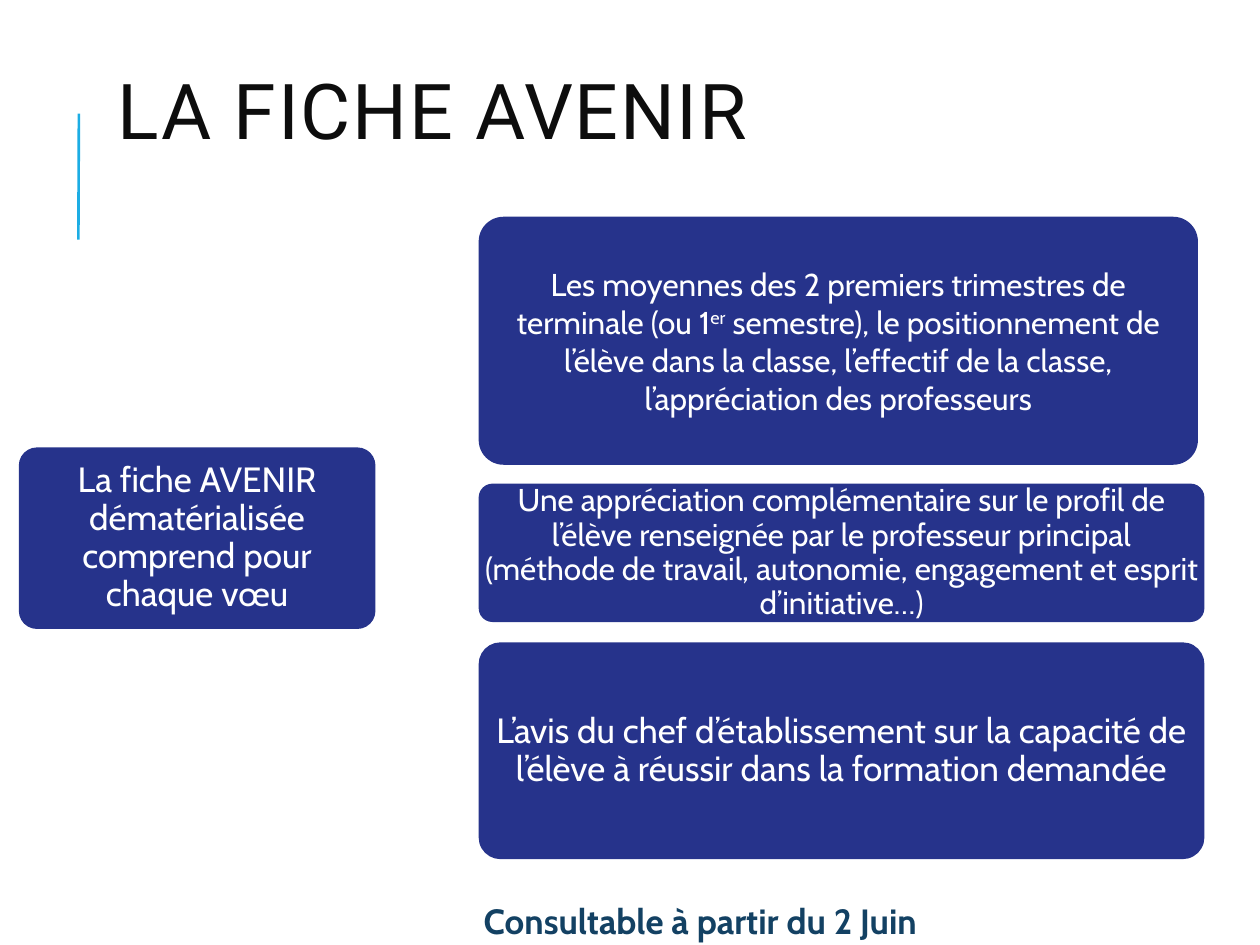
from dataclasses import dataclass

from lxml import etree
from pptx import Presentation
from pptx.dml.color import RGBColor
from pptx.enum.shapes import MSO_CONNECTOR, MSO_SHAPE
from pptx.enum.text import MSO_ANCHOR, PP_ALIGN
from pptx.oxml.ns import qn
from pptx.util import Cm, Pt

ROUNDED = MSO_SHAPE.ROUNDED_RECTANGLE
STRAIGHT = MSO_CONNECTOR.STRAIGHT
MIDDLE, TOP = MSO_ANCHOR.MIDDLE, MSO_ANCHOR.TOP
LEFT, CENTER = PP_ALIGN.LEFT, PP_ALIGN.CENTER

COLORS = {
    "box": "26338B",
    "white": "FFFFFF",
    "title": "0D0D0D",
    "accent": "1CADE4",
    "caption": "134163",
}
DETAIL_LEFT = 9.65


@dataclass
class Box:
    left: float
    top: float
    width: float
    height: float
    texts: tuple[str, ...]
    size: int
    line_spacing: float = 0.9


BOXES = [
    Box(0.38, 9.02, 7.19, 3.66,
        ("La fiche AVENIR dématérialisée comprend pour chaque vœu",), 20),
    Box(DETAIL_LEFT, 4.37, 14.5, 5,
        ("Les moyennes des 2 premiers trimestres de terminale (ou 1", "^er",
         " semestre), le positionnement de l’élève dans la classe, "
         "l’effectif de la classe, l’appréciation des professeurs"), 18, 1),
    Box(DETAIL_LEFT, 9.75, 14.63, 2.79,
        ("Une appréciation complémentaire sur le profil de l’élève renseignée "
         "par le professeur principal (méthode de travail, autonomie, "
         "engagement et esprit d’initiative…)",), 18),
    Box(DETAIL_LEFT, 12.95, 14.63, 4.37,
        ("L’avis du chef d’établissement sur la capacité de l’élève à réussir "
         "dans la formation demandée",), 20),
]


def rgb(name: str) -> RGBColor:
    return RGBColor.from_string(COLORS[name])


def write(tf, *texts: str, size: int, color: str, font: str = "Cabin",
          bold: bool = False, align=CENTER, anchor=MIDDLE,
          line_spacing: float = 1, inset: float | None = None,
          tracking: int = 0) -> None:
    tf.word_wrap = True
    tf.vertical_anchor = anchor
    if inset is not None:
        tf.margin_left = tf.margin_right = Cm(inset)
        tf.margin_top = tf.margin_bottom = Cm(inset)
    p = tf.paragraphs[0]
    p.alignment = align
    p.line_spacing = line_spacing
    for text in texts:
        r = p.add_run()
        r.text = text.removeprefix("^")
        r.font.name = font
        r.font.size = Pt(size)
        r.font.bold = bold
        r.font.color.rgb = rgb(color)
        if text.startswith("^"):
            r.font._element.set("baseline", "30000")
        if tracking:
            r.font._element.set("spc", str(tracking))


def draw_box(s, box: Box) -> None:
    sp = s.shapes.add_shape(ROUNDED, Cm(box.left), Cm(box.top),
                            Cm(box.width), Cm(box.height))
    sp.adjustments[0] = 0.1
    sp.shadow.inherit = False
    sp.fill.solid()
    sp.fill.fore_color.rgb = rgb("box")
    sp.line.fill.background()
    write(sp.text_frame, *box.texts, size=box.size, color="white",
          line_spacing=box.line_spacing, inset=0.02)


def draw_accent(s) -> None:
    line = s.shapes.add_connector(STRAIGHT, Cm(1.58), Cm(4.83),
                                  Cm(1.59), Cm(2.29))
    line.line.color.rgb = rgb("accent")
    line.line.width = Pt(1.5)
    etree.SubElement(line._element.spPr, qn("a:effectLst"))


def main() -> None:
    prs = Presentation()
    prs.slide_width, prs.slide_height = Cm(25.4), Cm(19.05)
    s = prs.slides.add_slide(prs.slide_layouts[5])
    draw_accent(s)

    title = s.shapes.title
    title.left, title.top = Cm(2.11), Cm(1.02)
    title.width, title.height = Cm(22.56), Cm(2.69)
    write(title.text_frame, "LA FICHE AVENIR", size=44, color="title",
          font="Roboto", align=LEFT, line_spacing=0.8, tracking=100)

    for box in BOXES:
        draw_box(s, box)

    caption = s.shapes.add_textbox(Cm(4.72), Cm(18.01), Cm(18.8), Cm(1.12))
    write(caption.text_frame, "Consultable à partir du 2 Juin", size=20,
          color="caption", bold=True, anchor=TOP)

    prs.save("out.pptx")


if __name__ == "__main__":
    main()
